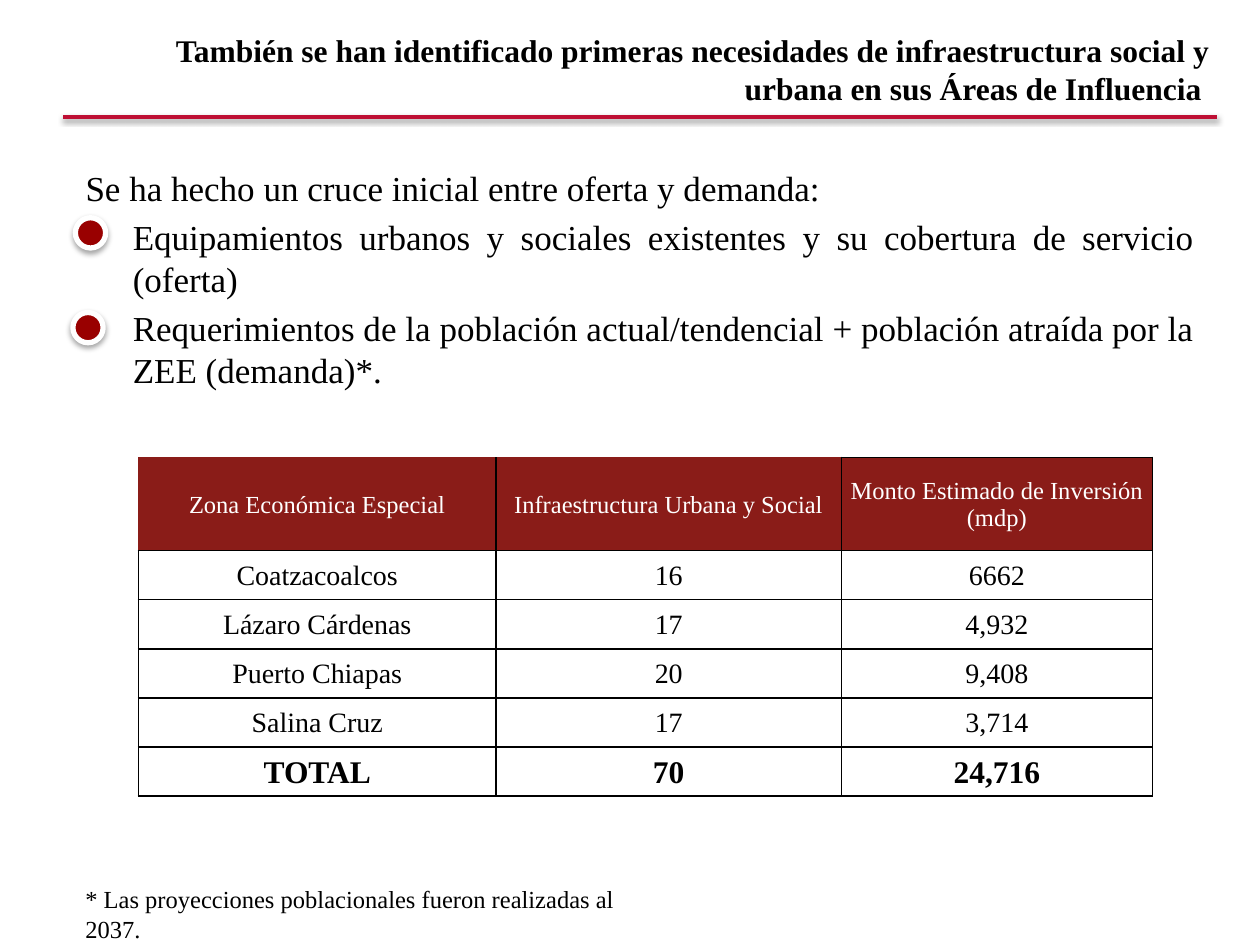
import pptx
import pptx.util
import pptx.dml.color
import pptx.enum.shapes
import pptx.enum.text
import pptx.oxml
import pptx.oxml.ns

Cm, Pt = pptx.util.Cm, pptx.util.Pt
PP_ALIGN = pptx.enum.text.PP_ALIGN
ANCHOR = pptx.enum.text.MSO_ANCHOR
FONT = "Times New Roman"
NS = pptx.oxml.ns.nsdecls("a")


def rgb(value):
    return pptx.dml.color.RGBColor.from_string(value)


def format_paragraph(p, size, align, color="000000", bold=False):
    p.alignment = align
    for r in p.runs:
        r.font.name = FONT
        r.font.size = Pt(size)
        r.font.bold = bold
        r.font.color.rgb = rgb(color)


prs = pptx.Presentation()
prs.slide_width, prs.slide_height = Cm(25.4), Cm(19.05)
s = prs.slides.add_slide(prs.slide_layouts[1])

# Title
title = s.shapes.title
title.left, title.top, title.width, title.height = Cm(1.78), Cm(-0.2), Cm(22.86), Cm(3.18)
tf = title.text_frame
tf.text = "También se han identificado primeras necesidades de infraestructura social y urbana en sus Áreas de Influencia "
tf.auto_size = pptx.enum.text.MSO_AUTO_SIZE.NONE
tf.vertical_anchor = ANCHOR.MIDDLE
format_paragraph(tf.paragraphs[0], 18, PP_ALIGN.RIGHT, bold=True)

# Body list: a plain lead-in, then bulleted items
body = s.placeholders[1]
body.left, body.top, body.width, body.height = Cm(1.47), Cm(3.23), Cm(22.86), Cm(12.57)
tf = body.text_frame
tf.text = "\n".join([
    "Se ha hecho un cruce inicial entre oferta y demanda:",
    "Equipamientos urbanos y sociales existentes y su cobertura de servicio (oferta)",
    "Requerimientos de la población actual/tendencial + población atraída por la ZEE (demanda)*.",
])
tf.auto_size = pptx.enum.text.MSO_AUTO_SIZE.NONE
for p in tf.paragraphs:
    format_paragraph(p, 20, PP_ALIGN.JUSTIFY)
pPr = tf.paragraphs[0]._p.get_or_add_pPr()
pPr.set("marL", "0")
pPr.set("indent", "0")
pPr.append(pptx.oxml.parse_xml(f"<a:buNone {NS}/>"))

# Rule under the title
rule = s.shapes.add_connector(pptx.enum.shapes.MSO_CONNECTOR.STRAIGHT,
                              Cm(1.27), Cm(2.36), Cm(24.54), Cm(2.36))
rule.line.color.rgb = rgb("BE0F34")
rule.line.width = Pt(2)
shadowed = [(rule, 1.6, 38)]

# Round markers over the bullets
for left, top in [(1.52, 4.39), (1.47, 6.3)]:
    sp = s.shapes.add_shape(pptx.enum.shapes.MSO_SHAPE.FLOWCHART_CONNECTOR,
                            Cm(left), Cm(top), Cm(0.61), Cm(0.61))
    sp.fill.solid()
    sp.fill.fore_color.rgb = rgb("990000")
    sp.line.color.rgb = rgb("FFFFFF")
    sp.line.width = Pt(3)
    shadowed.append((sp, 1.8, 35))

# Soft shadows straight down
for sp, distance, alpha in shadowed:
    sp._element.spPr.append(pptx.oxml.parse_xml(
        f'<a:effectLst {NS}><a:outerShdw blurRad="{Pt(3.1)}" dist="{Pt(distance)}" '
        f'dir="5400000" rotWithShape="0"><a:srgbClr val="000000">'
        f'<a:alpha val="{alpha * 1000}"/></a:srgbClr></a:outerShdw></a:effectLst>'))

# Investment table
rows = [
    ("Zona Económica Especial", "Infraestructura Urbana y Social", "Monto Estimado de Inversión (mdp)"),
    ("Coatzacoalcos", "16", "6662"),
    ("Lázaro Cárdenas", "17", "4,932"),
    ("Puerto Chiapas", "20", "9,408"),
    ("Salina Cruz", "17", "3,714"),
    ("TOTAL", "70", "24,716"),
]
widths = [7.21, 6.96, 6.27]
heights = [1.88] + [0.99] * 5
table = s.shapes.add_table(len(rows), len(widths), Cm(2.79), Cm(9.22),
                           Cm(sum(widths)), Cm(sum(heights))).table
for column, width in zip(table.columns, widths):
    column.width = Cm(width)
for i, row in enumerate(rows):
    table.rows[i].height = Cm(heights[i])
    header, total = i == 0, i == len(rows) - 1
    for j, text in enumerate(row):
        cell = table.cell(i, j)
        cell.text_frame.text = text
        cell.vertical_anchor = ANCHOR.MIDDLE
        cell.margin_left = cell.margin_right = cell.margin_top = Cm(0.03)
        cell.margin_bottom = 0
        format_paragraph(cell.text_frame.paragraphs[0], 14 if header else 18 if total else 16,
                         PP_ALIGN.CENTER, "FFFFFF" if header else "000000", total)
        # The first two header cells are open at the top, the first one at the left too
        hidden = {0: "LT", 1: "T"}.get(j, "") if header else ""
        for side in "LRTB":
            paint = ("<a:noFill/>" if side in hidden else
                     '<a:solidFill><a:srgbClr val="000000"/></a:solidFill>')
            cell._tc.get_or_add_tcPr().append(pptx.oxml.parse_xml(
                f'<a:ln{side} {NS} w="{Pt(1)}">{paint}</a:ln{side}>'))
        cell.fill.solid()
        cell.fill.fore_color.rgb = rgb("8A1C18" if header else "FFFFFF")

# Footnote
note = s.shapes.add_textbox(Cm(1.47), Cm(17.7), Cm(11.94), Cm(0.86))
tf = note.text_frame
tf.word_wrap = True
tf.text = "* Las proyecciones poblacionales fueron realizadas al 2037."
format_paragraph(tf.paragraphs[0], 14, PP_ALIGN.LEFT)

prs.save("out.pptx")
